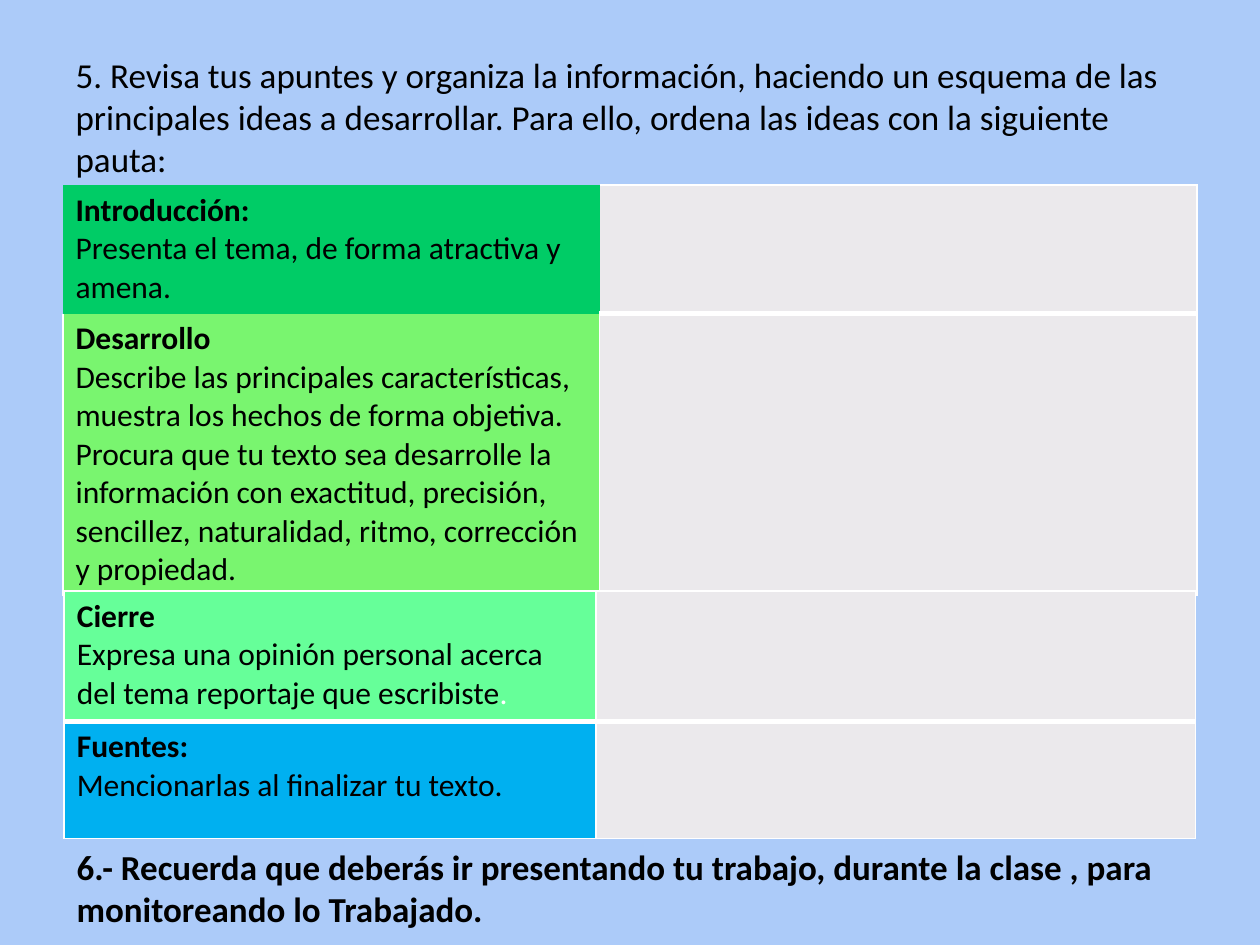
"""Build a slide with a writing guide: instructions, outline tables and a reminder."""
from lxml import etree
from pptx import Presentation
from pptx.dml.color import RGBColor
from pptx.enum.text import MSO_ANCHOR, MSO_AUTO_SIZE, PP_ALIGN
from pptx.oxml.ns import qn
from pptx.util import Pt

LEFT = PP_ALIGN.LEFT
MIDDLE = MSO_ANCHOR.MIDDLE
NO_AUTOFIT = MSO_AUTO_SIZE.NONE
FONT = "Calibri"
BLACK = RGBColor(0x00, 0x00, 0x00)
WHITE = RGBColor(0xFF, 0xFF, 0xFF)
SKY = RGBColor(0xAC, 0xCB, 0xF9)
GREY = RGBColor(0xEB, 0xE9, 0xEC)
EMERALD = RGBColor(0x00, 0xCC, 0x66)
LIME = RGBColor(0x79, 0xF5, 0x6F)
MINT = RGBColor(0x66, 0xFF, 0x99)
BLUE = RGBColor(0x00, 0xB0, 0xF0)

NO_BORDERS = {}
THIN = {"L": 1, "R": 1, "T": 1, "B": 1}
THICK_BOTTOM = {**THIN, "B": 3}
OPEN_LEFT = {"R": 1, "T": 1, "B": 3}
OPEN_TOP = {"L": 1, "R": 1, "B": 1}

INSTRUCTIONS = (
    "5. Revisa tus apuntes y organiza la información, haciendo un esquema de las "
    "principales ideas a desarrollar. Para ello, ordena las ideas con la siguiente pauta:"
)
REMINDER = (
    "6.- Recuerda que deberás ir presentando tu trabajo, durante la clase , "
    "para monitoreando lo Trabajado."
)
OPENING_ROWS = [
    (73.4, EMERALD, NO_BORDERS, OPEN_LEFT, [
        "Introducción:",
        "Presenta el tema, de forma atractiva y amena.",
    ]),
    (158.4, LIME, OPEN_TOP, THIN, [
        "Desarrollo",
        "Describe las principales características,",
        "muestra los hechos de forma objetiva. Procura que tu texto sea desarrolle la "
        "información con exactitud, precisión, sencillez, naturalidad, ritmo, "
        "corrección y propiedad.",
    ]),
]
CLOSING_ROWS = [
    (74.5, MINT, THICK_BOTTOM, THICK_BOTTOM, [
        "Cierre",
        "Expresa una opinión personal acerca del tema reportaje que escribiste",
    ]),
    (67, BLUE, THIN, THIN, [
        "Fuentes:",
        "Mencionarlas al finalizar tu texto.",
    ]),
]


def format_span(span, size, bold=False, color=BLACK):
    """Set the font of one run."""
    span.font.name = FONT
    span.font.size = Pt(size)
    span.font.bold = bold
    span.font.color.rgb = color


def format_cell(cell, fill, borders):
    """Give a cell its white borders and solid fill."""
    properties = cell._tc.get_or_add_tcPr()
    for side in "LRTB":
        width = borders.get(side, 0)
        line = etree.SubElement(properties, qn(f"a:ln{side}"), w=str(Pt(width)))
        if width:
            paint = etree.SubElement(line, qn("a:solidFill"))
            etree.SubElement(paint, qn("a:srgbClr"), val=str(WHITE))
        else:
            etree.SubElement(line, qn("a:noFill"))
    cell.fill.solid()
    cell.fill.fore_color.rgb = fill


def write_section(cell, lines):
    """Write a bold heading followed by plain paragraphs."""
    cell.text_frame.text = "\n".join(lines)
    for index, para in enumerate(cell.text_frame.paragraphs):
        for span in para.runs:
            format_span(span, 18, bold=index == 0)


def add_guide_table(page, left, top, widths, rows):
    """Add a table of guide sections with blank answer cells."""
    height = sum(row[0] for row in rows)
    table = page.shapes.add_table(
        len(rows), 2, Pt(left), Pt(top), Pt(sum(widths)), Pt(height)
    ).table
    table.first_row = False
    table.horz_banding = False
    for column, width in zip(table.columns, widths):
        column.width = Pt(width)
    for index, (row_height, fill, guide_borders, answer_borders, lines) in enumerate(rows):
        table.rows[index].height = Pt(row_height)
        guide, answer = table.cell(index, 0), table.cell(index, 1)
        format_cell(guide, fill, guide_borders)
        format_cell(answer, GREY, answer_borders)
        write_section(guide, lines)
    return table


def write_title(page):
    """Place and format the title placeholder."""
    title = page.shapes.title
    title.left, title.top, title.width, title.height = Pt(36), Pt(21.6), Pt(648), Pt(90)
    frame = title.text_frame
    frame.text = INSTRUCTIONS
    frame.vertical_anchor = MIDDLE
    frame.auto_size = NO_AUTOFIT
    para = frame.paragraphs[0]
    para.alignment = LEFT
    format_span(para.runs[0], 20)


def add_reminder(page):
    """Add the bold reminder below the tables."""
    box = page.shapes.add_textbox(Pt(36.7), Pt(479.5), Pt(708.5), Pt(55.4))
    frame = box.text_frame
    frame.word_wrap = True
    frame.text = REMINDER
    format_span(frame.paragraphs[0].runs[0], 20, bold=True)


def main():
    """Build and save the deck."""
    deck = Presentation()
    deck.slide_width, deck.slide_height = Pt(720), Pt(540)
    page = deck.slides.add_slide(deck.slide_layouts[5])
    page.background.fill.solid()
    page.background.fill.fore_color.rgb = SKY
    write_title(page)
    add_guide_table(page, 36, 105.8, (306.7, 341.3), OPENING_ROWS)
    closing = add_guide_table(page, 36.7, 337.7, (303.8, 342.7), CLOSING_ROWS)
    full_stop = closing.cell(0, 0).text_frame.paragraphs[-1].add_run()
    full_stop.text = "."
    format_span(full_stop, 18, color=WHITE)
    add_reminder(page)
    deck.save("out.pptx")


if __name__ == "__main__":
    main()
